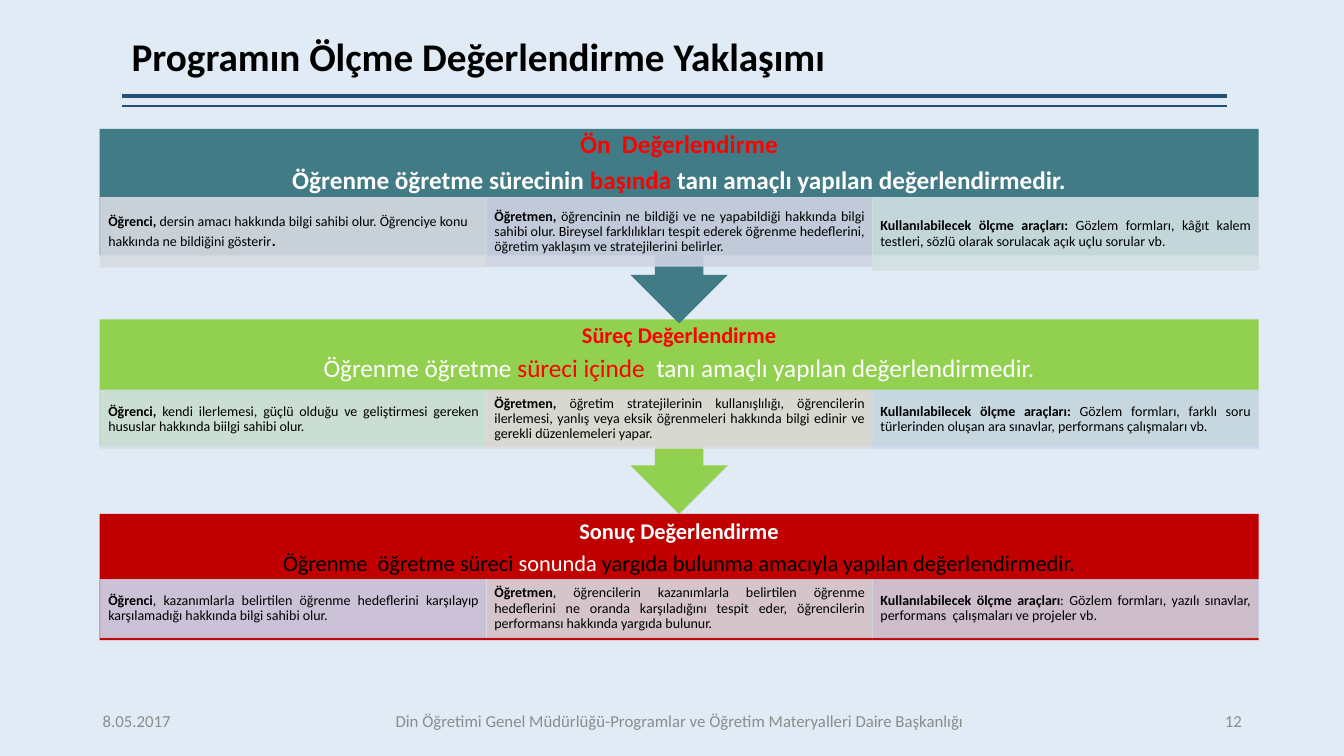
from lxml.etree import SubElement
from pptx import Presentation
from pptx.dml.color import RGBColor
from pptx.enum.shapes import MSO_CONNECTOR as Connector, MSO_SHAPE as Shape
from pptx.enum.text import MSO_ANCHOR as Anchor, PP_ALIGN as Align
from pptx.oxml.ns import qn
from pptx.util import Cm, Pt

COLORS = {
    "background": "E0EBF6", "rule": "234F77", "footer": "8C8C8C",
    "black": "000000", "white": "FFFFFF", "red": "FF0000",
    "teal": "417B85", "green": "92D050", "crimson": "C00000",
    "blue tint": "CDD8EF", "grey tint": "D8DBE2", "violet tint": "D0D3E3",
    "mint tint": "D2E0E3", "rose tint": "DFDBDF",
}
BAND_LEFT, BAND_WIDTH = 2.51, 29.21
CELL_LEFT, CELL_WIDTH = 2.53, 9.73
HEADING_HEIGHT = 1.73


def color(name):
    return RGBColor.from_string(COLORS[name])


class Deck:
    """Holds the style and the current slide."""
    font = "Calibri"
    line_spacing = 0.9
    tint_opacity = 90

    def __init__(self):
        self.presentation = Presentation()
        self.presentation.slide_width = Cm(33.87)
        self.presentation.slide_height = Cm(19.05)
        self.slide = self.presentation.slides.add_slide(self.presentation.slide_layouts[6])
        fill = self.slide.background.fill
        fill.solid()
        fill.fore_color.rgb = color("background")

    def rule(self, left, right, y, weight):
        line = self.slide.shapes.add_connector(
            Connector.STRAIGHT, Cm(left), Cm(y), Cm(right), Cm(y))
        line.line.color.rgb = color("rule")
        line.line.width = Pt(weight)
        SubElement(line._element.spPr, qn("a:effectLst"))

    def box(self, kind, left, top, width, height, fill):
        shape = self.slide.shapes.add_shape(kind, Cm(left), Cm(top), Cm(width), Cm(height))
        shape.shadow.inherit = False
        shape.fill.solid()
        shape.fill.fore_color.rgb = color(fill)
        shape.line.fill.background()
        return shape

    def tinted_cell(self, left, top, width, height, tint):
        cell = self.box(Shape.RECTANGLE, left, top, width, height, tint)
        cell.line.color.rgb = color(tint)
        cell.line.width = Pt(0.5)
        for rgb in cell._element.spPr.iter(qn("a:srgbClr")):
            SubElement(rgb, qn("a:alpha")).set("val", str(self.tint_opacity * 1000))
        return cell

    def text_box(self, left, top, width, height, margin_x=0.25, margin_y=0.13):
        box = self.slide.shapes.add_textbox(Cm(left), Cm(top), Cm(width), Cm(height))
        return self.frame(box, margin_x, margin_y)

    def frame(self, shape, margin_x, margin_y):
        frame = shape.text_frame
        frame.word_wrap = True
        frame.vertical_anchor = Anchor.MIDDLE
        frame.margin_left = frame.margin_right = Cm(margin_x)
        frame.margin_top = frame.margin_bottom = Cm(margin_y)
        return frame

    def set_runs(self, paragraph, runs, size, align=Align.LEFT, bold=None, ink=None,
                 spacing=None):
        """Each run is (text, settings); settings hold what varies inside the paragraph."""
        paragraph.alignment = align
        paragraph.line_spacing = spacing or self.line_spacing
        paragraph.font.name = self.font
        paragraph.font.size = Pt(size)
        if bold is not None:
            paragraph.font.bold = bold
        if ink:
            paragraph.font.color.rgb = color(ink)
        for text, settings in runs:
            run = paragraph.add_run()
            run.text = text
            if "ink" in settings:
                run.font.color.rgb = color(settings["ink"])
            if "bold" in settings:
                run.font.bold = settings["bold"]
            if "size" in settings:
                run.font.size = Pt(settings["size"])

    def heading(self, top, title, title_size, title_ink, summary, summary_size, bold):
        frame = self.text_box(BAND_LEFT, top, BAND_WIDTH, HEADING_HEIGHT, 0.3, 0)
        first = frame.paragraphs[0]
        self.set_runs(first, [(title, {})], title_size, Align.CENTER, True, title_ink)
        first.space_after = Pt(0.35 * title_size)
        runs = [(text, {"ink": ink}) for text, ink in summary]
        self.set_runs(frame.add_paragraph(), runs, summary_size, Align.CENTER, bold)

    def cells(self, top, cells):
        for column, (height, tint, align, lead, body, *ending) in enumerate(cells):
            left = CELL_LEFT + column * CELL_WIDTH
            cell = self.tinted_cell(left, top, CELL_WIDTH, height, tint)
            runs = [(lead, {"bold": True}), (body, {"bold": False})]
            runs += [(mark, {"bold": False, "size": 14}) for mark in ending]
            self.set_runs(self.frame(cell, 0.2, 0.02).paragraphs[0], runs, 10, align,
                          ink="black")


def main():
    deck = Deck()

    # Title with its double rule
    deck.rule(3.07, 30.91, 2.41, 3)
    deck.rule(3.07, 30.91, 2.67, 1)
    title = deck.text_box(3.07, 0.41, 28.47, 2.13)
    deck.set_runs(title.paragraphs[0], [("Programın Ölçme Değerlendirme Yaklaşımı", {})],
                  28, bold=True, ink="black")

    # Footer
    for left, width, align, text in [
        (2.34, 3.18, Align.LEFT, "8.05.2017"),
        (6.35, 21.56, Align.CENTER,
         "Din Öğretimi Genel Müdürlüğü-Programlar ve Öğretim Materyalleri Daire Başkanlığı"),
        (28.6, 2.95, Align.RIGHT, "12"),
    ]:
        footer = deck.text_box(left, 17.65, width, 1.02)
        deck.set_runs(footer.paragraphs[0], [(text, {})], 12, align, ink="footer", spacing=1.0)

    # Final assessment
    deck.box(Shape.RECTANGLE, BAND_LEFT, 12.95, BAND_WIDTH, 3.18, "crimson")
    deck.heading(12.95, "Sonuç Değerlendirme", 16, "white", [
        ("Öğrenme  öğretme süreci ", "black"), ("sonunda", "white"),
        (" yargıda bulunma amacıyla yapılan değerlendirmedir.", "black")], 16, False)
    deck.cells(14.6, [
        (1.47, "blue tint", Align.JUSTIFY, "Öğrenci",
         ", kazanımlarla belirtilen öğrenme hedeflerini karşılayıp karşılamadığı "
         "hakkında bilgi sahibi olur."),
        (1.47, "grey tint", Align.JUSTIFY, "Öğretmen",
         ", öğrencilerin kazanımlarla belirtilen öğrenme hedeflerini ne oranda "
         "karşıladığını tespit eder, öğrencilerin performansı hakkında yargıda bulunur."),
        (1.47, "violet tint", Align.JUSTIFY, "Kullanılabilecek ölçme araçları",
         ": Gözlem formları, yazılı sınavlar, performans  çalışmaları ve projeler vb."),
    ])

    # Assessment during the process
    process = deck.box(Shape.UP_ARROW_CALLOUT, BAND_LEFT, 8.05, BAND_WIDTH, 4.9, "green")
    process.rotation = 180
    deck.heading(8.05, "Süreç Değerlendirme", 16, "red", [
        ("Öğrenme öğretme ", "white"), ("süreci içinde  ", "red"),
        ("tanı amaçlı yapılan değerlendirmedir.", "white")], 18, False)
    deck.cells(9.83, [
        (1.47, "mint tint", Align.JUSTIFY, "Öğrenci, ",
         "kendi ilerlemesi, güçlü olduğu ve geliştirmesi gereken hususlar hakkında "
         "biilgi sahibi olur."),
        (1.47, "rose tint", Align.JUSTIFY, "Öğretmen,",
         " öğretim stratejilerinin kullanışlılığı, öğrencilerin ilerlemesi, yanlış veya "
         "eksik öğrenmeleri hakkında bilgi edinir ve gerekli düzenlemeleri yapar."),
        (1.47, "blue tint", Align.JUSTIFY, "Kullanılabilecek ölçme araçları: ",
         "Gözlem formları, farklı soru türlerinden oluşan ara sınavlar, performans "
         "çalışmaları vb."),
    ])

    # Preliminary assessment
    preliminary = deck.box(Shape.UP_ARROW_CALLOUT, BAND_LEFT, 3.25, BAND_WIDTH, 4.9, "teal")
    preliminary.rotation = 180
    deck.heading(3.25, "Ön  Değerlendirme", 18, "red", [
        ("Öğrenme öğretme sürecinin ", "white"), ("başında", "red"),
        (" tanı amaçlı yapılan değerlendirmedir.", "white")], 18, True)
    deck.cells(4.98, [
        (1.75, "grey tint", Align.LEFT, "Öğrenci,",
         " dersin amacı hakkında bilgi sahibi olur. Öğrenciye konu hakkında ne "
         "bildiğini gösterir", "."),
        (1.73, "violet tint", Align.JUSTIFY, "Öğretmen,",
         " öğrencinin ne bildiği ve ne yapabildiği hakkında bilgi sahibi olur. Bireysel "
         "farklılıkları tespit ederek öğrenme hedeflerini, öğretim yaklaşım ve "
         "stratejilerini belirler."),
        (1.83, "mint tint", Align.JUSTIFY, "Kullanılabilecek ölçme araçları: ",
         "Gözlem formları, kâğıt kalem testleri, sözlü olarak sorulacak açık uçlu "
         "sorular vb."),
    ])

    deck.presentation.save("out.pptx")


if __name__ == "__main__":
    main()
